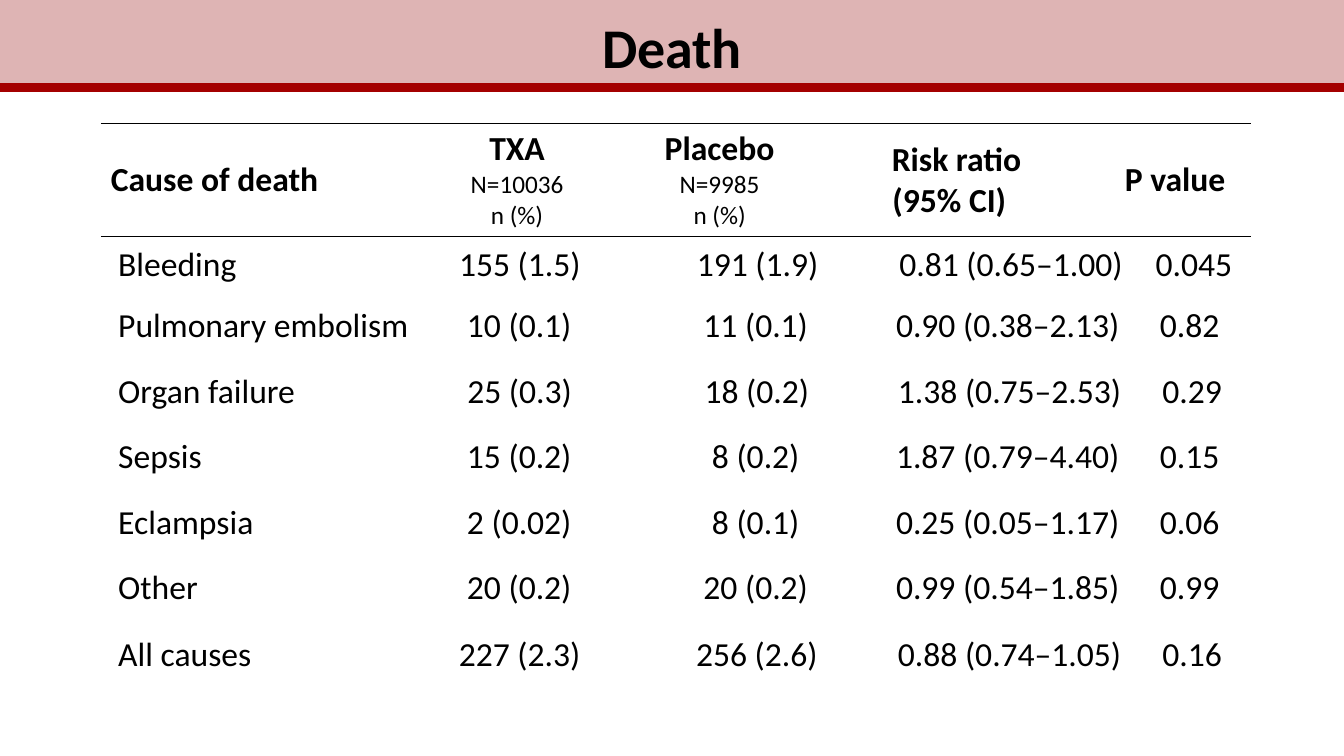
"""Build the slide that compares causes of death between TXA and placebo."""
from lxml.etree import SubElement
from pptx import Presentation
from pptx.dml.color import RGBColor
from pptx.enum.shapes import MSO_CONNECTOR
from pptx.enum.text import MSO_ANCHOR, MSO_AUTO_SIZE, PP_ALIGN
from pptx.oxml.ns import qn
from pptx.util import Cm, Pt

TITLE = "Death"
HEADINGS = [
    ["Cause of death"],
    ["TXA", "N=10036", "n (%)"],
    ["Placebo", "N=9985", "n (%)"],
    ["Risk ratio", "(95% CI)"],
    ["P value"],
]
HEADING_WIDTHS = [7.39, 6.2, 4.01, 7.57, 3.81]
SMALL_LINES = {"N=10036", "N=9985", "n (%)"}
INDENTS = {"Risk ratio": 0.36}

# top, height, total width, cell texts
RESULTS = [
    (5.92, 1.27, 28.6, ["Bleeding", "155 (1.5)", "191 (1.9)", "0.81 (0.65–1.00)", "0.045"]),
    (7.59, 1.14, 28.48, ["Pulmonary embolism", "10 (0.1)", "11 (0.1)", "0.90 (0.38–2.13)", "0.82"]),
    (9.12, 1.27, 28.55, ["Organ failure", "25 (0.3)", "18 (0.2)", "1.38 (0.75–2.53)", "0.29"]),
    (10.77, 1.27, 28.48, ["Sepsis", "15 (0.2)", "8 (0.2)", "1.87 (0.79–4.40)", "0.15"]),
    (12.42, 1.27, 28.48, ["Eclampsia", "2 (0.02)", "8 (0.1)", "0.25 (0.05–1.17)", "0.06"]),
    (14.07, 1.27, 28.48, ["Other", "20 (0.2)", "20 (0.2)", "0.99 (0.54–1.85)", "0.99"]),
    (15.75, 1.27, 28.55, ["All causes", "227 (2.3)", "256 (2.6)", "0.88 (0.74–1.05)", "0.16"]),
]
CAUSE_WIDTH = 7.39
VALUE_WIDTHS = [5.49, 6.43, 6.27, 2.9]
SLIDE_WIDTH, SLIDE_HEIGHT = 33.87, 19.05
FONT, BLACK, PINK, RED = "Calibri", "000000", "DEB4B4", "A40000"
PLAIN_STYLE = "{2D5ABB26-0587-4C30-8999-92F81FD0307C}"


def colour(hex_text):
    return RGBColor.from_string(hex_text)


def set_font(para, size, bold):
    para.font.name = FONT
    para.font.size = Pt(size)
    para.font.bold = bold
    para.font.color.rgb = colour(BLACK)


def add_row_table(page, left, top, height, widths):
    frame = page.shapes.add_table(1, len(widths), Cm(left), Cm(top), Cm(sum(widths)), Cm(height))
    table = frame.table
    table.first_row = table.horz_banding = False
    table._tbl.tblPr.find(qn("a:tableStyleId")).text = PLAIN_STYLE
    for column, width in zip(table.columns, widths):
        column.width = Cm(width)
    return table


def add_rules(cell):
    for side in ("a:lnT", "a:lnB"):
        line = SubElement(cell._tc.get_or_add_tcPr(), qn(side), w=str(Pt(1)))
        fill = SubElement(line, qn("a:solidFill"))
        SubElement(fill, qn("a:srgbClr"), val=BLACK)


def write_cell(cell, lines, centred, bold, anchor):
    cell.fill.background()
    cell.vertical_anchor = anchor
    cell.text_frame.text = "\n".join(lines)
    for para, line in zip(cell.text_frame.paragraphs, lines):
        para.alignment = PP_ALIGN.CENTER if centred else PP_ALIGN.LEFT
        if line in INDENTS:
            para._p.get_or_add_pPr().set("marL", str(Cm(INDENTS[line])))
        small = line in SMALL_LINES
        set_font(para, 18 if small else 24, bold and not small)


def add_title(page):
    title = page.shapes.title
    title.left, title.top, title.width, title.height = 0, 0, Cm(SLIDE_WIDTH), Cm(2.31)
    title.fill.solid()
    title.fill.fore_color.rgb = colour(PINK)
    title.text_frame.text = TITLE
    title.text_frame.auto_size = MSO_AUTO_SIZE.NONE
    title.text_frame.vertical_anchor = MSO_ANCHOR.MIDDLE
    para = title.text_frame.paragraphs[0]
    para.alignment = PP_ALIGN.CENTER
    set_font(para, 40, True)
    rule = page.shapes.add_connector(MSO_CONNECTOR.STRAIGHT, 0, Cm(2.21), Cm(SLIDE_WIDTH), Cm(2.21))
    rule.line.color.rgb = colour(RED)
    rule.line.width = Pt(6)
    SubElement(rule._element.spPr, qn("a:effectLst"))


def add_results(page):
    for top, height, total, texts in RESULTS:
        stretch = (total - CAUSE_WIDTH) / sum(VALUE_WIDTHS)
        widths = [CAUSE_WIDTH] + [width * stretch for width in VALUE_WIDTHS]
        table = add_row_table(page, 2.95, top, height, widths)
        for index, text in enumerate(texts):
            cell = table.cell(0, index)
            cell.margin_left = cell.margin_right = cell.margin_top = Cm(0.03)
            cell.margin_bottom = 0
            write_cell(cell, [text], index > 0, False, MSO_ANCHOR.BOTTOM)


def add_headings(page):
    table = add_row_table(page, 2.54, 3.12, 2.79, HEADING_WIDTHS)
    for index, lines in enumerate(HEADINGS):
        cell = table.cell(0, index)
        add_rules(cell)
        write_cell(cell, lines, index > 0, True, MSO_ANCHOR.MIDDLE)


def main():
    deck = Presentation()
    deck.slide_width, deck.slide_height = Cm(SLIDE_WIDTH), Cm(SLIDE_HEIGHT)
    page = deck.slides.add_slide(deck.slide_layouts[5])
    add_title(page)
    add_results(page)
    add_headings(page)
    deck.save("out.pptx")


if __name__ == "__main__":
    main()
